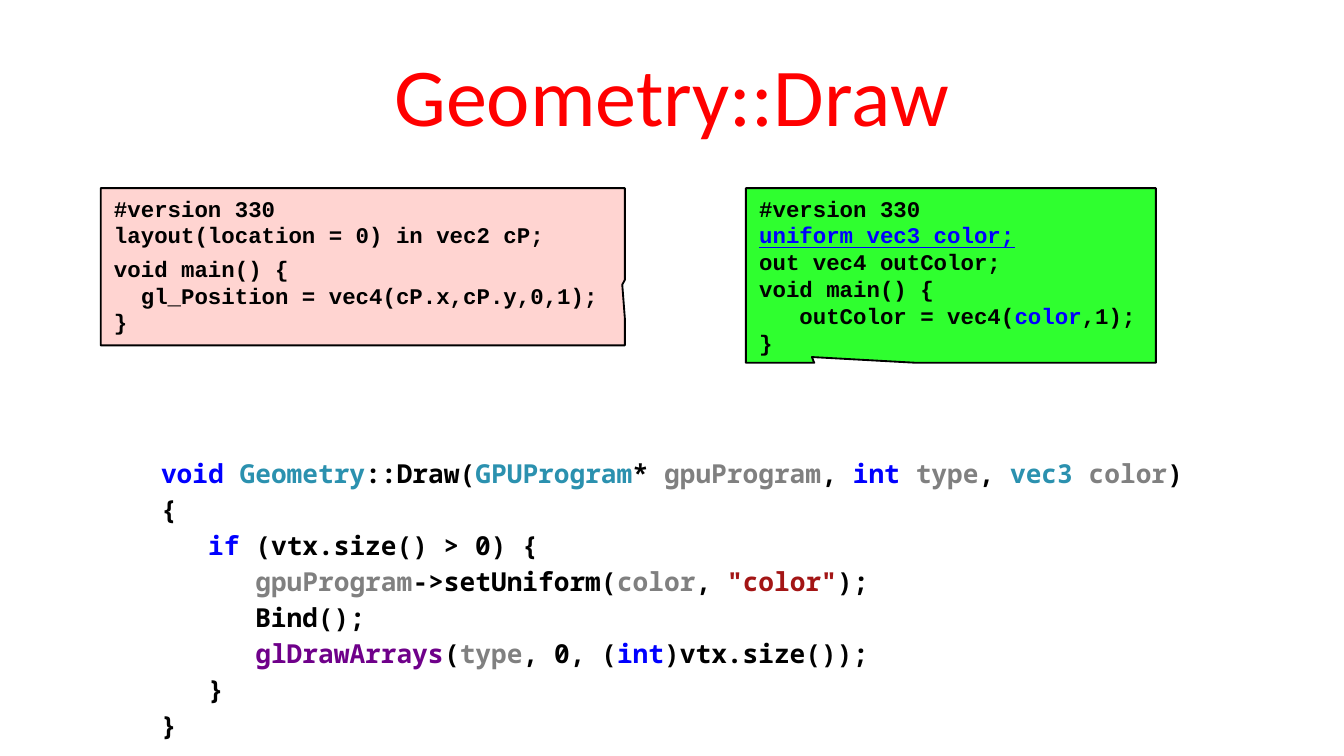
from dataclasses import dataclass

from pptx import Presentation
from pptx.dml.color import RGBColor
from pptx.enum.shapes import MSO_SHAPE as Shape
from pptx.enum.text import MSO_ANCHOR as Anchor, PP_ALIGN as Align
from pptx.util import Pt

BLACK, BLUE, TEAL, GREY = "000000", "0000FF", "2B91AF", "808080"
RED, MAROON, PURPLE = "FF0000", "A31515", "6F008A"


@dataclass
class Token:
    text: str
    color: str = BLACK
    under: bool = False


@dataclass
class Line:
    tokens: list[Token]
    before: float = 0


@dataclass
class Shader:
    box: tuple[float, float, float, float]
    tip: tuple[float, float]
    fill: str
    lines: list[Line]


def line(*items: str | tuple, before: float = 0) -> Line:
    """Make a code line; a plain string is a black token."""
    return Line([Token(i) if isinstance(i, str) else Token(*i) for i in items], before)


SHADERS = [
    Shader((54, 100.8, 280.8, 84.24), (0.495, 0.114), "FFD4D1", [
        line("#version 330"),
        line("layout(location = 0) in vec2 cP;"),
        line("void main() {", before=3.4),
        line("  gl_Position = vec4(cP.x,cP.y,0,1);"),
        line("}"),
    ]),
    Shader((399.6, 100.8, 219.6, 93.6), (-0.339, 0.467), "2FFF2F", [
        line("#version 330"),
        line(("uniform vec3 color;", BLUE, True)),
        line("out vec4 outColor;"),
        line("void main() {"),
        line("   outColor = vec4(", ("color", BLUE), ",1);"),
        line("}"),
    ]),
]

DRAW = [
    line(("void ", BLUE), ("Geometry", TEAL), "::Draw(", ("GPUProgram", TEAL), "* ",
         ("gpuProgram", GREY), ", ", ("int ", BLUE), ("type", GREY), ", ",
         ("vec3 ", TEAL), ("color", GREY), ") {"),
    line("   ", ("if ", BLUE), "(vtx.size() > 0) {"),
    line("      ", ("gpuProgram", GREY), "->setUniform(", ("color", GREY), ", ",
         ('"color"', MAROON), ");"),
    line("      Bind();"),
    line("      ", ("glDrawArrays", PURPLE), "(", ("type", GREY), ", 0, (",
         ("int", BLUE), ")vtx.size());"),
    line("   }"),
    line("}"),
]


def paint(target, color: str) -> None:
    """Set a solid colour on a fill, line or font."""
    if hasattr(target, "solid"):
        target.solid()
        target.fore_color.rgb = RGBColor.from_string(color)
    else:
        target.color.rgb = RGBColor.from_string(color)


def write(frame, lines: list[Line], font: str, size: float, space: float | None = None) -> None:
    frame.word_wrap = True
    frame.vertical_anchor = Anchor.TOP
    for i, row in enumerate(lines):
        para = frame.paragraphs[0] if i == 0 else frame.add_paragraph()
        para.alignment = Align.LEFT
        para.space_before = Pt(row.before)
        if space:
            para.line_spacing = space
        for token in row.tokens:
            run = para.add_run()
            run.text = token.text
            run.font.name, run.font.size, run.font.bold = font, Pt(size), True
            if token.under:
                run.font.underline = True
            paint(run.font, token.color)


def draw_shader(slide, shader: Shader) -> None:
    note = slide.shapes.add_shape(Shape.RECTANGULAR_CALLOUT, *map(Pt, shader.box))
    note.adjustments[0], note.adjustments[1] = shader.tip
    note.shadow.inherit = False
    paint(note.fill, shader.fill)
    paint(note.line, BLACK)
    note.line.width = Pt(1)
    write(note.text_frame, shader.lines, "Courier New", 12)


def set_title(slide, text: str) -> None:
    title = slide.shapes.title
    title.left, title.top, title.width, title.height = map(Pt, (36, 16.56, 648, 67.68))
    frame = title.text_frame
    frame.text = text
    frame.vertical_anchor = Anchor.MIDDLE
    para = frame.paragraphs[0]
    para.alignment = Align.CENTER
    font = para.runs[0].font
    font.name, font.size = "Calibri", Pt(44)
    paint(font, RED)


def main() -> None:
    deck = Presentation()
    deck.slide_width, deck.slide_height = Pt(720), Pt(405)
    slide = deck.slides.add_slide(deck.slide_layouts[5])
    set_title(slide, "Geometry::Draw")
    code = slide.shapes.add_textbox(*map(Pt, (79.2, 239.04, 565.92, 142.56)))
    write(code.text_frame, DRAW, "Noto Sans Mono", 14, 1.15)
    for shader in SHADERS:
        draw_shader(slide, shader)
    deck.save("out.pptx")


if __name__ == "__main__":
    main()
